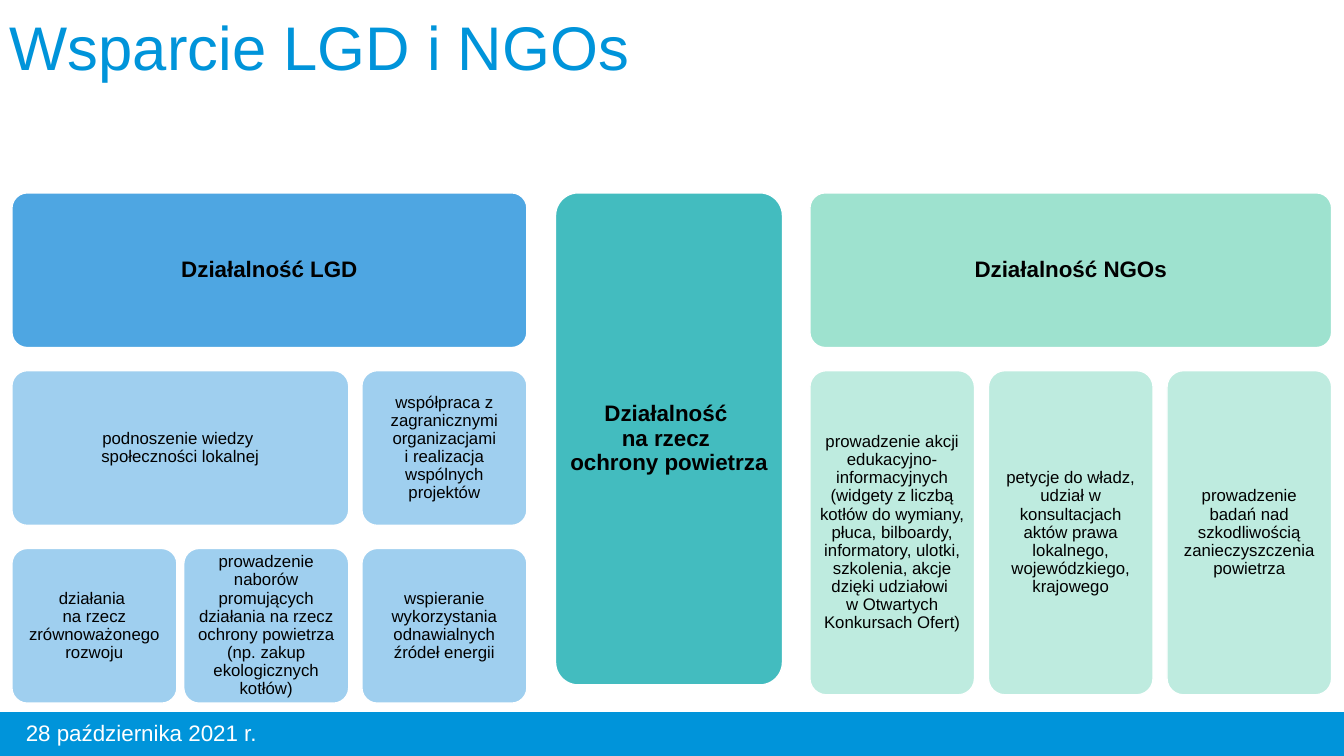
from lxml.etree import SubElement
from pptx import Presentation
from pptx.dml.color import RGBColor
from pptx.enum.shapes import MSO_SHAPE
from pptx.enum.text import MSO_ANCHOR, PP_ALIGN
from pptx.oxml.ns import qn
from pptx.util import Cm, Pt

COLORS = {
    "brand": "0094DA",
    "white": "FFFFFF",
    "black": "000000",
    "lgd": "4EA6E2",
    "lgd_light": "9FCFEF",
    "shared": "43BCBF",
    "ngo": "9EE2CF",
    "ngo_light": "BEEBDF",
}

ROW_TOP, ROW_STEP, ROW_HEIGHT = 4.86, 4.48, 3.9
LGD_LEFTS, LGD_WIDTH = (0.3, 4.63, 9.12), 4.16
NGO_LEFT, NGO_STEP, NGO_WIDTH, NGO_HEIGHT = 20.41, 4.5, 4.15, 8.17

# (first column, last column, row, text)
LGD_ACTIVITIES = [
    (0, 1, 1, "podnoszenie wiedzy \nspołeczności lokalnej"),
    (0, 0, 2, "działania \nna rzecz zrównoważonego rozwoju"),
    (1, 1, 2, "prowadzenie naborów promujących działania na rzecz "
              "ochrony powietrza (np. zakup ekologicznych kotłów)"),
    (2, 2, 1, "współpraca z zagranicznymi organizacjami\n"
              "i realizacja wspólnych projektów"),
    (2, 2, 2, "wspieranie wykorzystania odnawialnych źródeł energii"),
]
NGO_ACTIVITIES = [
    "prowadzenie akcji edukacyjno-informacyjnych\n(widgety z liczbą kotłów "
    "do wymiany, płuca, bilboardy, informatory, ulotki, szkolenia, akcje "
    "dzięki udziałowi \nw Otwartych Konkursach Ofert)",
    "petycje do władz, udział w konsultacjach aktów prawa lokalnego, "
    "wojewódzkiego, krajowego",
    "prowadzenie badań nad szkodliwością zanieczyszczenia powietrza",
]


def color(name):
    return RGBColor.from_string(COLORS[name])


def write(frame, text, size, text_color, bold=False, align=PP_ALIGN.LEFT,
          spacing=1.0, anchor=MSO_ANCHOR.MIDDLE):
    frame.word_wrap = True
    frame.vertical_anchor = anchor
    paragraph = frame.paragraphs[0]
    paragraph.text = text
    paragraph.alignment = align
    paragraph.line_spacing = spacing
    for run in paragraph.runs:
        run.font.name = "Arial"
        run.font.size = Pt(size)
        run.font.bold = bold
        run.font.color.rgb = color(text_color)
    for line_break in paragraph._p.findall(qn("a:br")):
        SubElement(line_break, qn("a:rPr"), sz=str(size * 100))


def add_filled(slide, preset, left, top, width, height, fill, line):
    shape = slide.shapes.add_shape(
        preset, Cm(left), Cm(top), Cm(width), Cm(height))
    shape.shadow.inherit = False
    shape.fill.solid()
    shape.fill.fore_color.rgb = color(fill)
    shape.line.color.rgb = color(line)
    shape.line.width = Pt(1)
    return shape


def add_card(slide, left, top, width, height, fill, text, heading=False):
    card = add_filled(slide, MSO_SHAPE.ROUNDED_RECTANGLE,
                      left, top, width, height, fill, "white")
    card.adjustments[0] = 0.1
    frame = card.text_frame
    inset = Cm(0.17 if heading else 0.13)
    frame.margin_left = frame.margin_right = inset
    frame.margin_top = frame.margin_bottom = inset
    write(frame, text, 16 if heading else 12, "black", heading,
          PP_ALIGN.CENTER, 0.9)


def add_label(slide, left, top, width, height, text, size, text_color, **style):
    label = slide.shapes.add_textbox(Cm(left), Cm(top), Cm(width), Cm(height))
    write(label.text_frame, text, size, text_color, **style)


def add_lgd(slide):
    def add_cell(first, last, row, fill, text, heading=False):
        left = LGD_LEFTS[first]
        add_card(slide, left, ROW_TOP + row * ROW_STEP,
                 LGD_LEFTS[last] + LGD_WIDTH - left, ROW_HEIGHT,
                 fill, text, heading)

    add_cell(0, 2, 0, "lgd", "Działalność LGD", True)
    for first, last, row, text in LGD_ACTIVITIES:
        add_cell(first, last, row, "lgd_light", text)


def add_ngo(slide):
    add_card(slide, NGO_LEFT, ROW_TOP, 2 * NGO_STEP + NGO_WIDTH, ROW_HEIGHT,
             "ngo", "Działalność NGOs", True)
    for column, text in enumerate(NGO_ACTIVITIES):
        add_card(slide, NGO_LEFT + column * NGO_STEP, ROW_TOP + ROW_STEP,
                 NGO_WIDTH, NGO_HEIGHT, "ngo_light", text)


def main():
    presentation = Presentation()
    presentation.slide_width = Cm(33.87)
    presentation.slide_height = Cm(19.05)
    slide = presentation.slides.add_slide(presentation.slide_layouts[6])

    add_filled(slide, MSO_SHAPE.RECTANGLE, 0, 17.95, 33.87, 1.1,
               "brand", "brand")
    add_label(slide, 0, 0.08, 24.1, 2.16, "Wsparcie LGD i NGOs", 44, "brand",
              spacing=0.9, anchor=MSO_ANCHOR.BOTTOM)
    add_lgd(slide)
    add_card(slide, 14, ROW_TOP, 5.72, 12.4, "shared",
             "Działalność \nna rzecz \nochrony powietrza", True)
    add_ngo(slide)
    add_label(slide, 0.4, 17.95, 10.16, 1.02, "28 października 2021 r.",
              16, "white")

    presentation.save("out.pptx")


if __name__ == "__main__":
    main()
